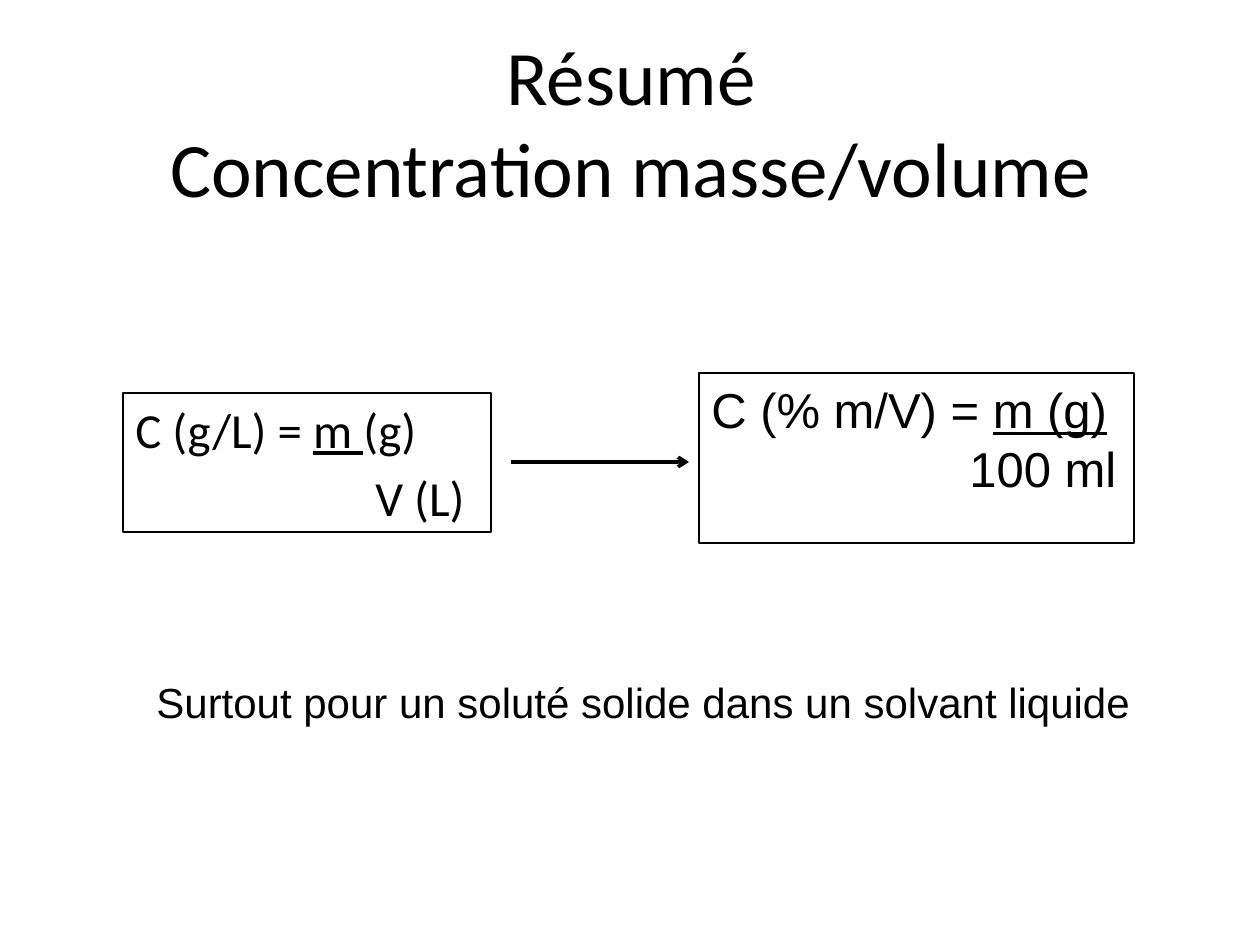
"""Build the summary slide on mass/volume concentration."""
from lxml.etree import SubElement
from pptx import Presentation
from pptx.dml.color import RGBColor
from pptx.enum.shapes import MSO_CONNECTOR, MSO_SHAPE
from pptx.enum.text import MSO_ANCHOR as Anchor, PP_ALIGN as Align
from pptx.oxml.ns import qn
from pptx.util import Emu, Pt

BLACK = RGBColor(0, 0, 0)
SCALE = 914400 / 126


def px(length):
    return Emu(round(length * SCALE))


def write(area, lines, *, font, size, align=Align.LEFT, anchor=Anchor.TOP,
          wrap=True, before=0, indents=(0, 0)):
    frame = area.text_frame
    frame.word_wrap = wrap
    frame.vertical_anchor = anchor
    for number, (runs, indent) in enumerate(zip(lines, indents)):
        paragraph = frame.add_paragraph() if number else frame.paragraphs[0]
        paragraph.alignment = align
        paragraph.space_before = Pt(before)
        paragraph._p.get_or_add_pPr().set("marL", str(px(indent)))
        for words, underlined in runs:
            run = paragraph.add_run()
            run.text = words
            run.font.name = font
            run.font.size = Pt(size)
            run.font.underline = underlined
            run.font.color.rgb = BLACK


deck = Presentation()
deck.slide_width, deck.slide_height = px(1260), px(945)
slide = deck.slides.add_slide(deck.slide_layouts[6])
shapes = slide.shapes

title = shapes.add_textbox(px(64), px(26), px(1134), px(189))
write(title, [[("Résumé", False)], [("Concentration masse/volume", False)]],
      font="Calibri", size=44, align=Align.CENTER, anchor=Anchor.MIDDLE)

formulas = [
    ((123, 393, 368, 139), "Calibri", 5.6, 240,
     [[("C (g/L) = ", False), ("m ", True), ("(g)", False)], [("V (L)", False)]]),
    ((699, 373, 435, 170), "Arial", 0, 258,
     [[("C (% m/V) = ", False), ("m (g)", True)], [("100 ml", False)]]),
]
for place, font, before, denominator_indent, lines in formulas:
    formula = shapes.add_shape(MSO_SHAPE.RECTANGLE, *map(px, place))
    formula.shadow.inherit = False
    formula.fill.background()
    formula.line.color.rgb = BLACK
    formula.line.width = Pt(0.75)
    write(formula, lines, font=font, size=28, before=before,
          indents=(0, denominator_indent))

arrow = shapes.add_connector(MSO_CONNECTOR.STRAIGHT, px(511), px(462), px(689), px(462))
arrow.line.color.rgb = BLACK
arrow.line.width = Pt(2)
SubElement(arrow.line._get_or_add_ln(), qn("a:tailEnd"), type="arrow")
SubElement(arrow._element.spPr, qn("a:effectLst"))

usage = shapes.add_textbox(px(144), px(670), px(1017), px(64))
write(usage, [[("Surtout pour un soluté solide dans un solvant liquide", False)]],
      font="Arial", size=24, wrap=False)

deck.save("out.pptx")
